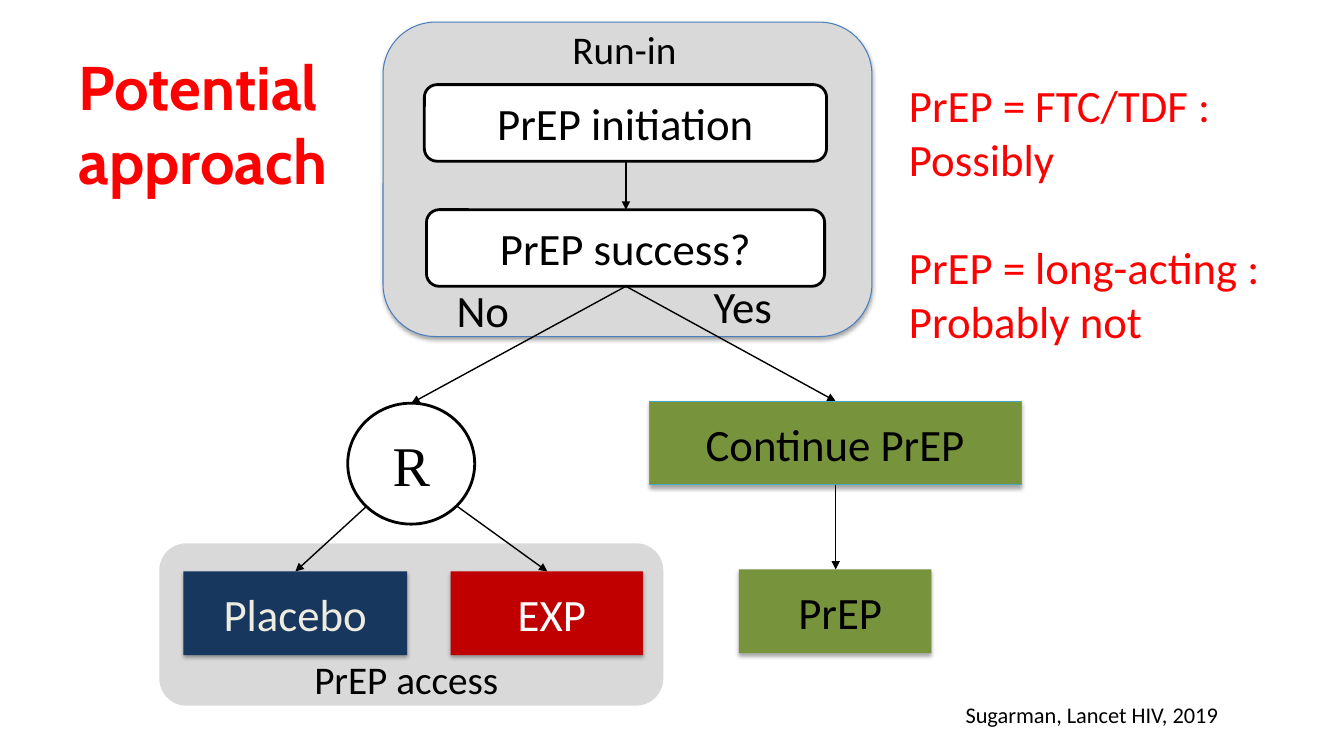
from lxml import etree
from pptx import Presentation
from pptx import util as u
from pptx.dml import color
from pptx.enum import shapes, text
from pptx.oxml import ns

COLORS = {
    "black": "000000", "white": "FFFFFF", "gray": "D9D9D9", "red": "FF0000",
    "dark_red": "C00000", "navy": "17375E", "cream": "EEECE1",
    "green": "77933C", "teal": "46AAC5", "blue": "4B7EBC",
}
ROUND = shapes.MSO_SHAPE.ROUNDED_RECTANGLE
RECT = shapes.MSO_SHAPE.RECTANGLE
OVAL = shapes.MSO_SHAPE.OVAL
LEFT, CENTER = text.PP_ALIGN.LEFT, text.PP_ALIGN.CENTER
TOP, MIDDLE = text.MSO_ANCHOR.TOP, text.MSO_ANCHOR.MIDDLE


def write(shape, lines, size, color_name, font="Calibri", bold=False,
          align=LEFT, anchor=TOP, gap=0):
    frame = shape.text_frame
    frame.word_wrap = True
    frame.vertical_anchor = anchor
    for index, line in enumerate(lines):
        paragraph = frame.add_paragraph() if index else frame.paragraphs[0]
        paragraph.alignment = align
        if index:
            paragraph.space_before = u.Pt(gap)
        run = paragraph.add_run()
        run.text = line
        run.font.name = font
        run.font.size = u.Pt(size)
        run.font.bold = bold
        run.font.color.rgb = color.RGBColor.from_string(COLORS[color_name])


def add_box(kind, bounds, fill, line=None, width=0, shadow=False):
    shape = slide.shapes.add_shape(kind, *map(u.Pt, bounds))
    shape.shadow.inherit = False
    shape.fill.solid()
    shape.fill.fore_color.rgb = color.RGBColor.from_string(COLORS[fill])
    if line:
        shape.line.color.rgb = color.RGBColor.from_string(COLORS[line])
        shape.line.width = u.Pt(width)
    else:
        shape.line.fill.background()
    if shadow:
        effects = shape._element.spPr.find(ns.qn("a:effectLst"))
        outer = etree.SubElement(
            effects, ns.qn("a:outerShdw"), blurRad=str(u.Pt(3.1)),
            dist=str(u.Pt(1.8)), dir="5400000", rotWithShape="0")
        tint = etree.SubElement(outer, ns.qn("a:srgbClr"), val=COLORS["black"])
        etree.SubElement(tint, ns.qn("a:alpha"), val="35000")
    return shape


presentation = Presentation()
presentation.slide_width = u.Pt(960)
presentation.slide_height = u.Pt(540)
slide = presentation.slides.add_slide(presentation.slide_layouts[6])

add_box(ROUND, (273.6, 15.8, 349.2, 224.6), "gray", "blue", 0.75, True)
add_box(ROUND, (113.8, 388.1, 360, 115.9), "gray")

arrows = [
    (447.1, 115.2, 447.1, 149.8),
    (447.1, 204.5, 293.8, 288),
    (447.1, 204.5, 596.9, 286.6),
    (262.1, 361.4, 211, 408.2),
    (326.2, 361.4, 391, 408.2),
    (596.9, 346.3, 596.9, 406.8),
]
for ends in arrows:
    arrow = slide.shapes.add_connector(
        shapes.MSO_CONNECTOR.STRAIGHT, *map(u.Pt, ends))
    arrow.line.color.rgb = color.RGBColor.from_string(COLORS["black"])
    arrow.line.width = u.Pt(1)
    etree.SubElement(arrow.line._get_or_add_ln(), ns.qn("a:tailEnd"), type="triangle")
    etree.SubElement(arrow._element.spPr, ns.qn("a:effectLst"))

steps = [
    ("PrEP initiation", ROUND, (303.1, 60.5, 287.3, 54.7)),
    ("PrEP success?", ROUND, (304.6, 149.8, 284.4, 54.7)),
    ("R", OVAL, (248.4, 288, 90.7, 86.4)),
]
for label, kind, bounds in steps:
    step = add_box(kind, bounds, "white", "black", 2)
    size, font = (40, "Times New Roman") if kind == OVAL else (32, "Calibri")
    write(step, [label], size, "black", font, align=CENTER, anchor=MIDDLE)

arms = [
    ("Placebo", (131, 408.2, 159.8, 59.8), "navy", "cream", None, 7.2),
    ("EXP", (321.8, 408.2, 137.5, 59.8), "dark_red", "white", None, 14.4),
    ("Continue PrEP", (463.7, 286.6, 265.7, 59.8), "green", "black", "teal", 7.2),
    ("PrEP", (527.8, 406.8, 137.5, 59.8), "green", "black", None, 14.4),
]
for label, bounds, fill, ink, line, inset in arms:
    arm = add_box(RECT, bounds, fill, line, 0.75, True)
    arm.text_frame.margin_left = u.Pt(inset)
    write(arm, [label], 32, ink, align=CENTER, anchor=MIDDLE)

labels = [
    ("Run-in", (401.8, 14.4, 100, 41), 28, LEFT),
    ("No", (319, 198.7, 112, 46), 32, LEFT),
    ("Yes", (502.6, 195.8, 120, 46), 32, LEFT),
    ("PrEP access", (110.2, 464.4, 360, 41), 28, CENTER),
    ("Sugarman, Lancet HIV, 2019", (682.6, 497.5, 235.4, 26.6), 16, LEFT),
]
for label, bounds, size, align in labels:
    box = slide.shapes.add_textbox(*map(u.Pt, bounds))
    write(box, [label], size, "black", align=align)

title = slide.shapes.add_textbox(u.Pt(49), u.Pt(15.8), u.Pt(247), u.Pt(144))
write(title, ["Potential approach"], 44, "red", "Cabin", True, anchor=MIDDLE)

notes = slide.shapes.add_textbox(u.Pt(642.2), u.Pt(51.8), u.Pt(298), u.Pt(201))
write(notes, ["PrEP = FTC/TDF : Possibly", "PrEP = long-acting : Probably not"],
      32, "red", gap=39)

presentation.save("out.pptx")
